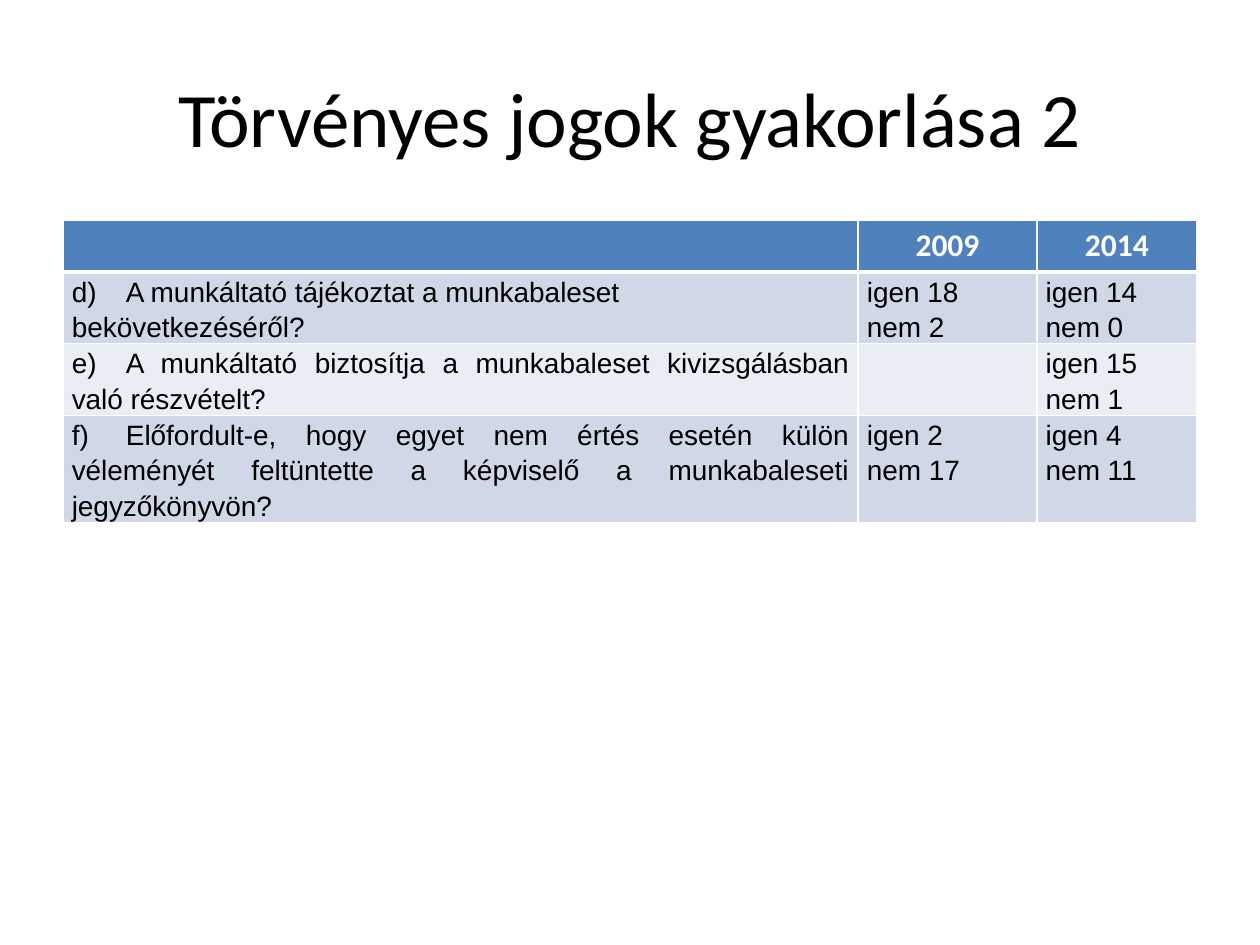
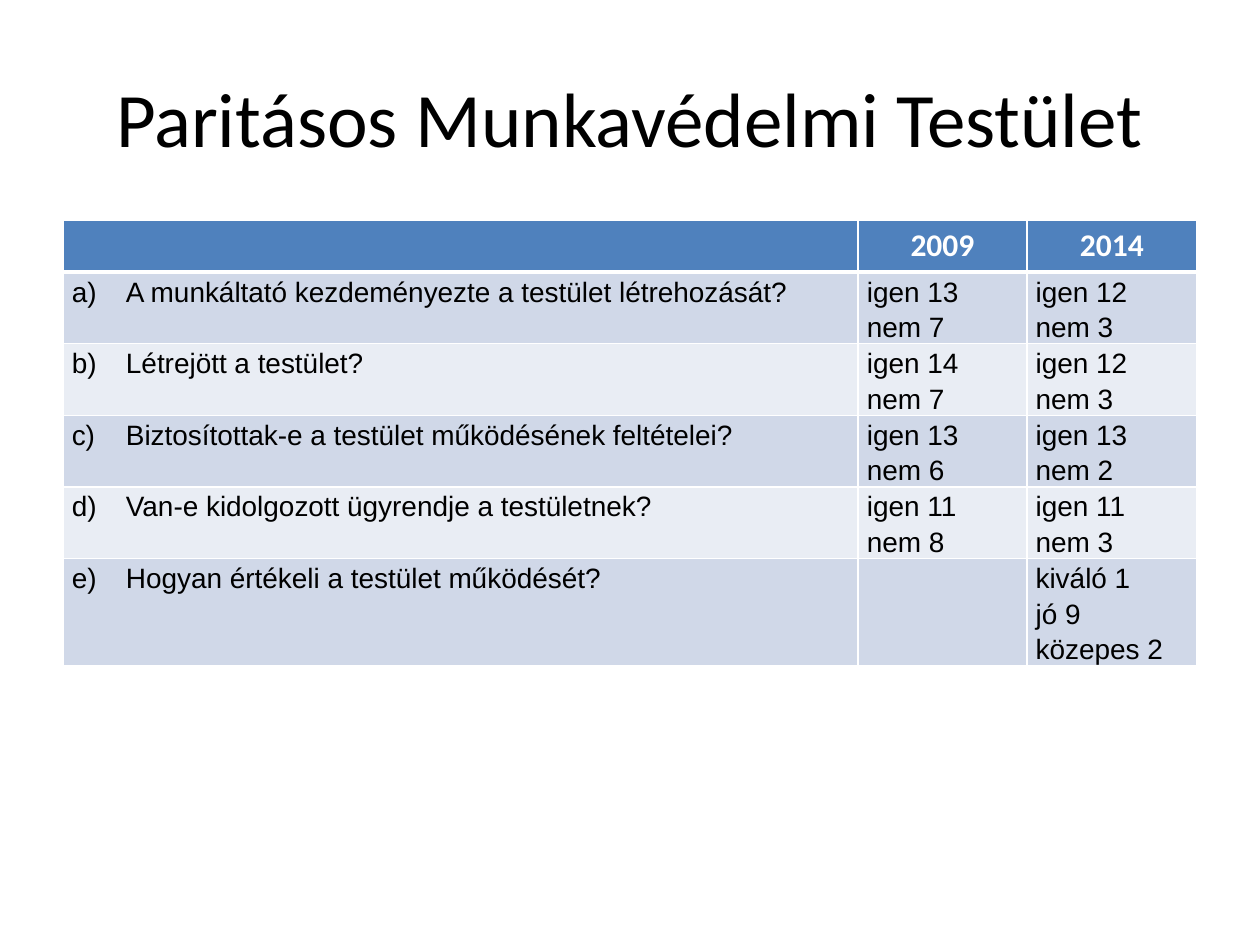
from dataclasses import dataclass
from math import ceil

from lxml import etree
from pptx import Presentation
from pptx.dml.color import RGBColor
from pptx.enum.text import MSO_ANCHOR, PP_ALIGN
from pptx.oxml.ns import qn
from pptx.util import Inches, Pt

LEFT, CENTER, JUSTIFY = PP_ALIGN.LEFT, PP_ALIGN.CENTER, PP_ALIGN.JUSTIFY
MIDDLE = MSO_ANCHOR.MIDDLE


@dataclass(frozen=True)
class Theme:
    text: str = "000000"
    white: str = "FFFFFF"
    header: str = "4F81BD"
    bands: tuple = ("D0D8E8", "E9EDF4")
    heading_font: str = "Calibri"
    body_font: str = "Arial"
    title_size: int = 44
    header_size: int = 18
    body_size: int = 16
    line_spacing: float = 1.15
    thin_line: int = 1
    thick_line: int = 3


@dataclass(frozen=True)
class Question:
    marker: str
    wording: str
    answers_2009: tuple
    answers_2014: tuple
    align: int = JUSTIFY


THEME = Theme()
HEADERS = ("", "2009", "2014")

SLIDES = [
    {
        "title": "Törvényes jogok gyakorlása 2",
        "columns": (6.31, 1.42, 1.27),
        "questions": [
            Question("d)", "A munkáltató tájékoztat a munkabaleset bekövetkezéséről?",
                     ("igen 18", "nem 2"), ("igen 14", "nem 0"), LEFT),
            Question("e)", "A munkáltató biztosítja a munkabaleset kivizsgálásban való részvételt?",
                     (), ("igen 15", "nem 1")),
            Question("f)", "Előfordult-e, hogy egyet nem értés esetén külön véleményét "
                     "feltüntette a képviselő a munkabaleseti jegyzőkönyvön?",
                     ("igen 2", "nem 17"), ("igen 4", "nem 11")),
        ],
    },
    {
        "title": "Paritásos Munkavédelmi Testület",
        "columns": (6.31, 1.34, 1.35),
        "questions": [
            Question("a)", "A munkáltató kezdeményezte a testület létrehozását?",
                     ("igen 13", "nem 7"), ("igen 12", "nem 3")),
            Question("b)", "Létrejött a testület?",
                     ("igen 14", "nem 7"), ("igen 12", "nem 3")),
            Question("c)", "Biztosítottak-e a testület működésének feltételei?",
                     ("igen 13", "nem 6"), ("igen 13", "nem 2")),
            Question("d)", "Van-e kidolgozott ügyrendje a testületnek?",
                     ("igen 11", "nem 8"), ("igen 11", "nem 3")),
            Question("e)", "Hogyan értékeli a testület működését?",
                     (), ("kiváló 1", "jó 9", "közepes 2")),
        ],
    },
]

MARGIN, CONTENT_WIDTH = 0.5, 9
TITLE_TOP, TITLE_HEIGHT = 0.3, 1.25
TABLE_TOP, HEADER_HEIGHT, LINE_HEIGHT = 1.75, 0.41, 0.28
CELL_MARGIN, QUESTION_TAB = 0.07, 0.43
CHARACTERS_PER_LINE = 55


def write(frame, lines, *, size, font, color=THEME.text, bold=False,
          align=LEFT, spacing=None, tab=None):
    """Fill a text frame with one paragraph per line."""
    for index, line in enumerate(lines):
        para = frame.add_paragraph() if index else frame.paragraphs[0]
        para.alignment = align
        if spacing:
            para.line_spacing = spacing
        if tab:
            tabs = etree.SubElement(para._p.get_or_add_pPr(), qn("a:tabLst"))
            etree.SubElement(tabs, qn("a:tab"), pos=str(Inches(tab)), algn="l")
        span = para.add_run()
        span.text = line
        span.font.size = Pt(size)
        span.font.name = font
        span.font.bold = bold
        span.font.color.rgb = RGBColor.from_string(color)


def style_cell(cell, fill, top, bottom):
    """Set white borders, with the given top and bottom widths, and the fill."""
    properties = cell._tc.get_or_add_tcPr()
    widths = {"L": THEME.thin_line, "R": THEME.thin_line, "T": top, "B": bottom}
    for side, width in widths.items():
        line = etree.SubElement(properties, qn(f"a:ln{side}"), w=str(Pt(width)))
        paint = etree.SubElement(line, qn("a:solidFill"))
        etree.SubElement(paint, qn("a:srgbClr"), val=THEME.white)
    cell.fill.solid()
    cell.fill.fore_color.rgb = RGBColor.from_string(fill)


def line_count(question):
    return max(ceil(len(question.wording) / CHARACTERS_PER_LINE),
               len(question.answers_2009), len(question.answers_2014))


def add_title(page, text):
    title = page.shapes.title
    title.left, title.top = Inches(MARGIN), Inches(TITLE_TOP)
    title.width, title.height = Inches(CONTENT_WIDTH), Inches(TITLE_HEIGHT)
    title.text_frame.vertical_anchor = MIDDLE
    write(title.text_frame, [text], size=THEME.title_size,
          font=THEME.heading_font, align=CENTER)


def add_header(table):
    for cell, label in zip(table.rows[0].cells, HEADERS):
        style_cell(cell, THEME.header, THEME.thin_line, THEME.thick_line)
        if label:
            write(cell.text_frame, [label], size=THEME.header_size,
                  font=THEME.heading_font, color=THEME.white, bold=True, align=CENTER)


def add_question(table, number, question):
    top = THEME.thick_line if number == 1 else THEME.thin_line
    fill = THEME.bands[(number - 1) % len(THEME.bands)]
    contents = ((f"{question.marker}\t{question.wording}",),
                question.answers_2009, question.answers_2014)
    for column, lines in enumerate(contents):
        cell = table.cell(number, column)
        style_cell(cell, fill, top, THEME.thin_line)
        cell.margin_left = cell.margin_right = Inches(CELL_MARGIN)
        cell.margin_top = cell.margin_bottom = 0
        write(cell.text_frame, lines, size=THEME.body_size, font=THEME.body_font,
              align=question.align, spacing=THEME.line_spacing,
              tab=None if column else QUESTION_TAB)


def add_survey_table(page, columns, questions):
    heights = [HEADER_HEIGHT] + [LINE_HEIGHT * line_count(item) for item in questions]
    table = page.shapes.add_table(
        len(heights), len(columns), Inches(MARGIN), Inches(TABLE_TOP),
        Inches(CONTENT_WIDTH), Inches(sum(heights))).table
    for column, width in zip(table.columns, columns):
        column.width = Inches(width)
    for row, height in zip(table.rows, heights):
        row.height = Inches(height)
    add_header(table)
    for number, question in enumerate(questions, start=1):
        add_question(table, number, question)


def main():
    deck = Presentation()
    deck.slide_width, deck.slide_height = Inches(10), Inches(7.5)
    title_only = deck.slide_layouts.get_by_name("Title Only")
    for content in SLIDES:
        page = deck.slides.add_slide(title_only)
        add_title(page, content["title"])
        add_survey_table(page, content["columns"], content["questions"])
    deck.save("out.pptx")


if __name__ == "__main__":
    main()
